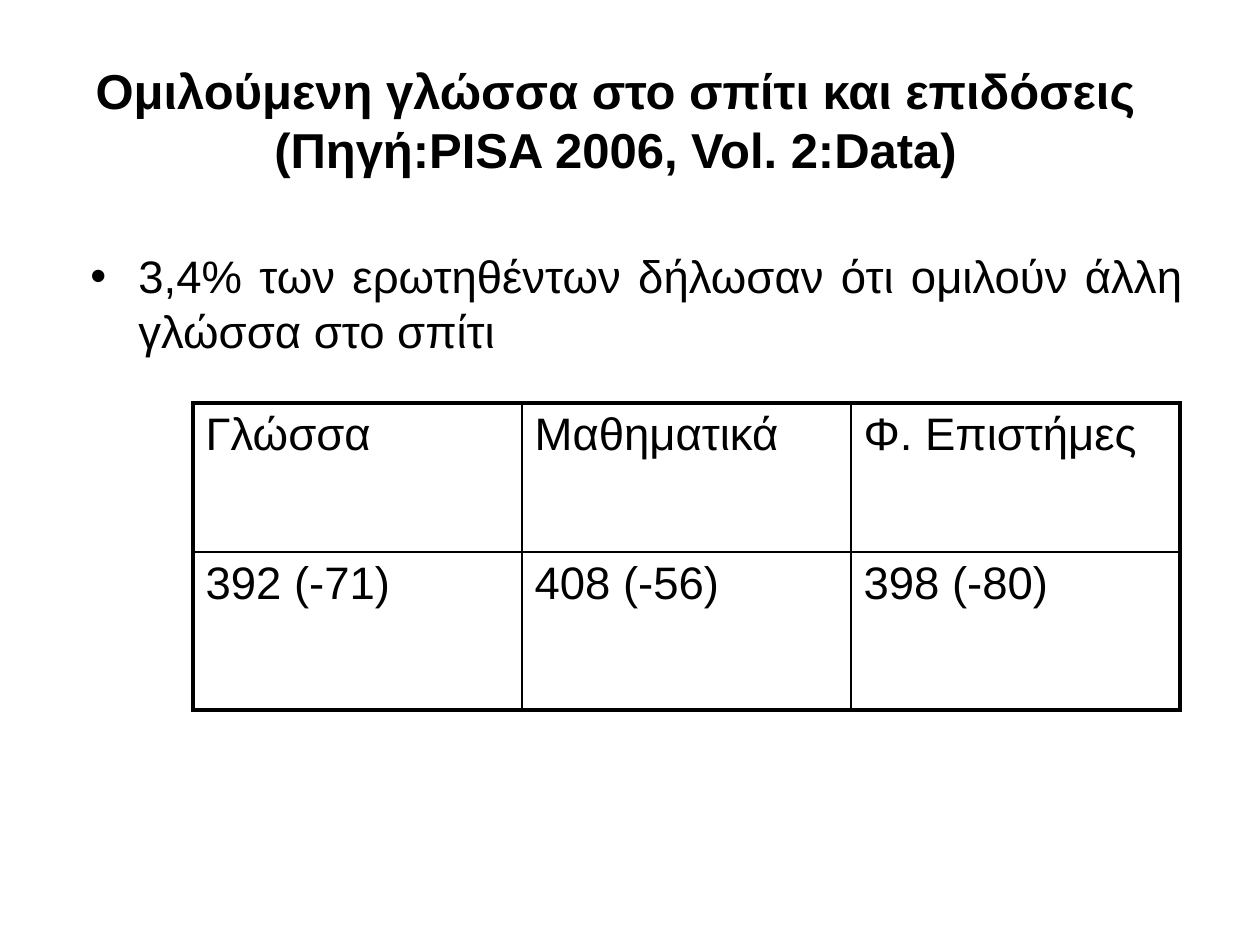
import pptx
import pptx.util
import pptx.dml.color
import pptx.enum.text
import pptx.oxml
import pptx.oxml.ns

PX = 914400 / 126
INK = "000000"
ALIGN = pptx.enum.text.PP_ALIGN
ANCHOR = pptx.enum.text.MSO_ANCHOR
NS = pptx.oxml.ns.nsdecls("a")


def px(*nums):
    return [pptx.util.Emu(round(n * PX)) for n in nums]


def write(frame, text, size, align, bold=False):
    para = frame.paragraphs[0]
    para.alignment = align
    run = para.add_run()
    run.text = text
    style = {"name": "Arial", "size": pptx.util.Pt(size), "bold": bold}
    for key, val in style.items():
        setattr(run.font, key, val)
    run.font.color.rgb = pptx.dml.color.RGBColor.from_string(INK)
    return para


deck = pptx.Presentation()
deck.slide_width, deck.slide_height = px(1260, 945)
slide = deck.slides.add_slide(deck.slide_layouts[6])

title = slide.shapes.add_textbox(*px(64, 35, 1103, 168)).text_frame
title.word_wrap = True
title.vertical_anchor = ANCHOR.MIDDLE
write(title, "Ομιλούμενη γλώσσα στο σπίτι και επιδόσεις (Πηγή:PISA 2006, Vol. 2:Data)",
      28, ALIGN.CENTER, True)

body = slide.shapes.add_textbox(*px(78, 242, 1118, 588)).text_frame
body.word_wrap = True
para = write(body, "3,4% των ερωτηθέντων δήλωσαν ότι ομιλούν άλλη γλώσσα στο σπίτι",
             26, ALIGN.JUSTIFY)
para.space_before = pptx.util.Pt(3)
props = para._p.get_or_add_pPr()
indent = px(48)[0]
props.set("marL", str(indent))
props.set("indent", str(-indent))
props.append(pptx.oxml.parse_xml(f'<a:buFont {NS} typeface="Arial"/>'))
props.append(pptx.oxml.parse_xml(f'<a:buChar {NS} char="•"/>'))

rows = [
    ["Γλώσσα", "Μαθηματικά", "Φ. Επιστήμες"],
    ["392 (-71)", "408 (-56)", "398 (-80)"],
]
table = slide.shapes.add_table(2, 3, *px(193, 403, 987, 307)).table
table.first_row = False
table.horz_banding = False
for col in table.columns:
    col.width = px(329)[0]
for row, high in zip(table.rows, px(149, 158)):
    row.height = high

for r, row in enumerate(rows):
    for c, text in enumerate(row):
        cell = table.cell(r, c)
        cell.fill.background()
        write(cell.text_frame, text, 26, ALIGN.LEFT)
        outer = {"L": c == 0, "R": c == 2, "T": r == 0, "B": r == 1}
        props = cell._tc.get_or_add_tcPr()
        for pos, (side, edge) in enumerate(outer.items()):
            wide = pptx.util.Pt(2.25 if edge else 1)
            props.insert(pos, pptx.oxml.parse_xml(
                f'<a:ln{side} {NS} w="{wide}"><a:solidFill>'
                f'<a:srgbClr val="{INK}"/></a:solidFill></a:ln{side}>'))

deck.save("out.pptx")
